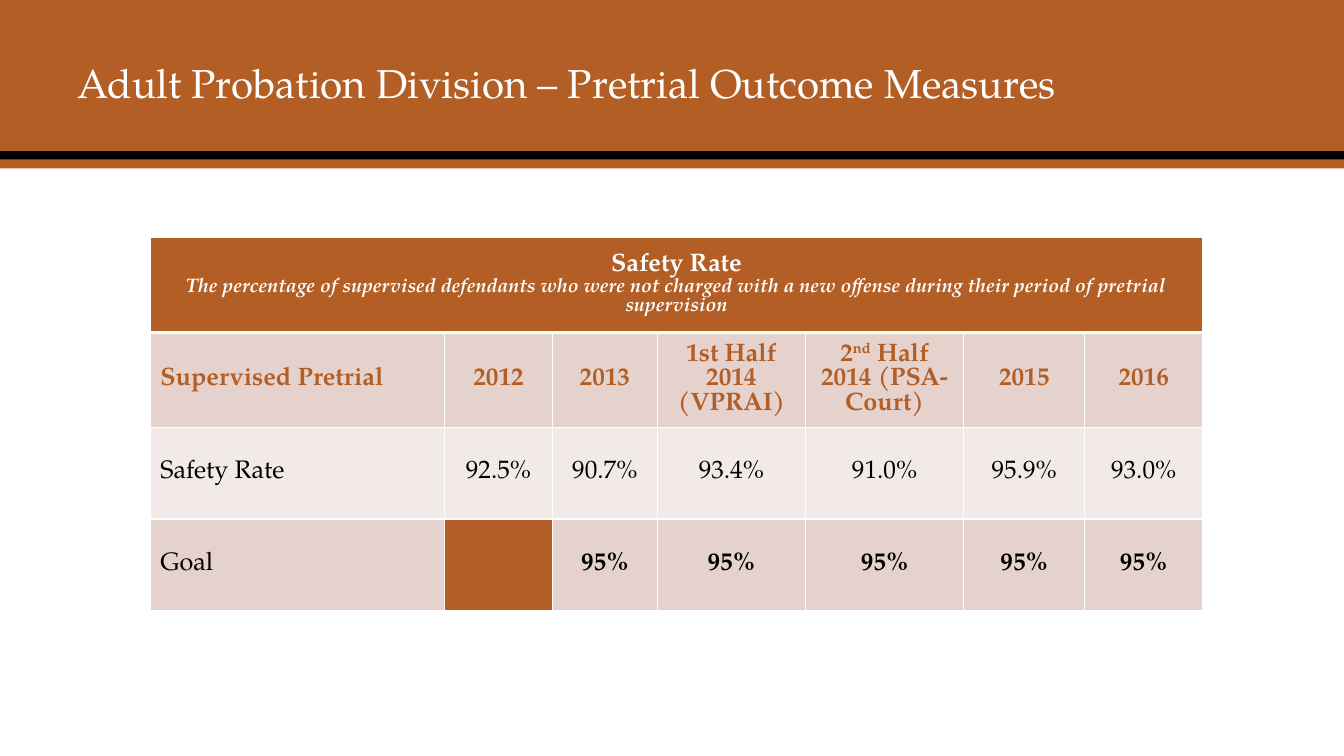
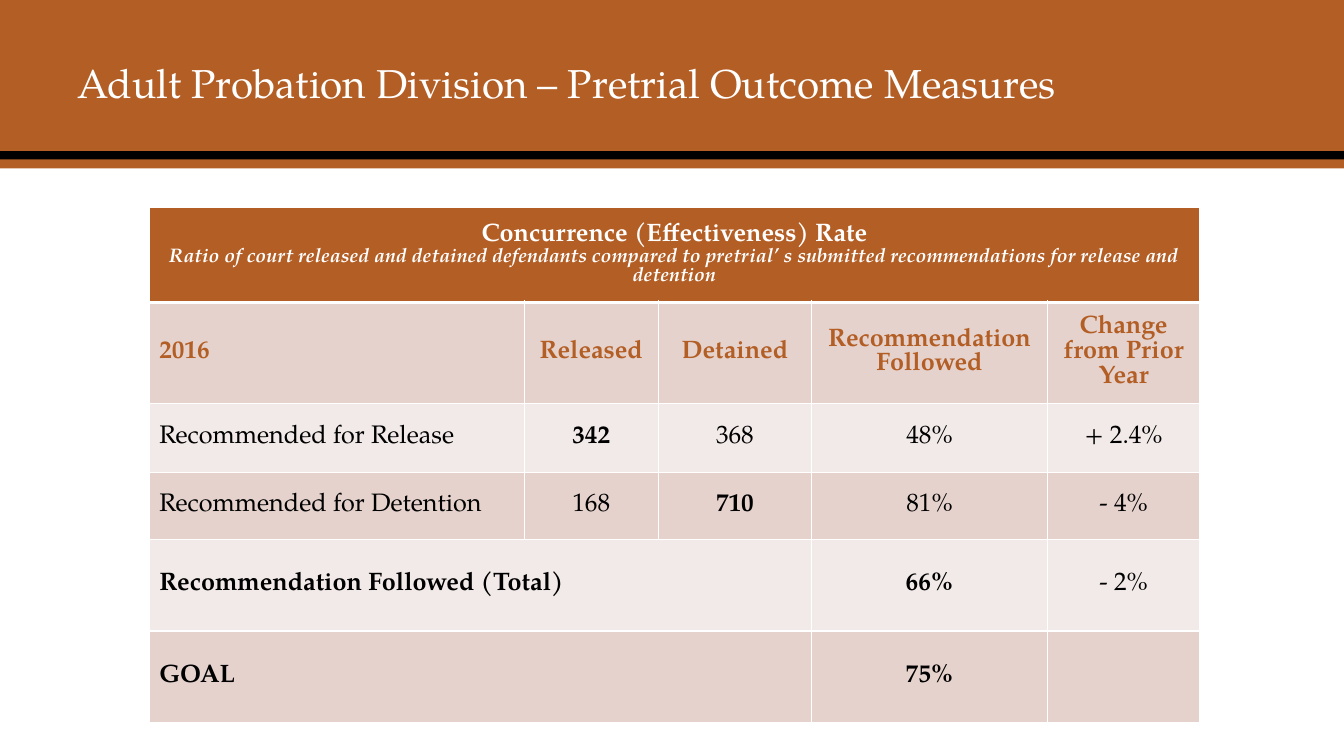
"""Build two slides of pretrial outcome measure tables."""
from pptx import Presentation
from pptx.dml.color import RGBColor
from pptx.enum.shapes import MSO_SHAPE
from pptx.enum.text import MSO_ANCHOR as ANCHOR, PP_ALIGN as ALIGN
from pptx.oxml import parse_xml
from pptx.oxml.ns import nsdecls
from pptx.util import Inches, Pt

COLORS = {
    "rust": "B35E25",
    "black": "000000",
    "white": "FFFFFF",
    "dark_band": "E5D2CD",
    "light_band": "F2EAE8",
}
FONT = "TeX Gyre Pagella"
TITLE = "Adult Probation Division – Pretrial Outcome Measures"
BANDS = [(0, 1.5, "rust"), (1.5, 0.09, "black"), (1.58, 0.09, "rust")]

TABLES = [
    {
        "left": 1.49,
        "top": 2.36,
        "columns": [2.92, 1.07, 1.04, 1.47, 1.57, 1.2, 1.17],
        "heights": [0.94, 0.94, 0.91, 0.91],
        "rows": [
            ["Safety Rate\nThe percentage of supervised defendants who were not charged "
             "with a new offense during their period of pretrial supervision"],
            ["Supervised Pretrial", "2012", "2013", "1st Half 2014\n(VPRAI)",
             "2^nd^ Half 2014 (PSA-Court)", "2015", "2016"],
            ["Safety Rate", "92.5%", "90.7%", "93.4%", "91.0%", "95.9%", "93.0%"],
            ["Goal", "", "95%", "95%", "95%", "95%", "95%"],
        ],
        "spans": {0: 7},
        "bold": {(3, column) for column in range(2, 7)},
        "fills": {(3, 1): "rust"},
    },
    {
        "left": 1.48,
        "top": 2.06,
        "columns": [3.72, 1.33, 1.52, 2.34, 1.51],
        "heights": [0.94, 0.81, 0.69, 0.66, 0.91, 0.91],
        "rows": [
            ["Concurrence (Effectiveness) Rate\nRatio of court released and detained "
             "defendants compared to pretrial’ s submitted recommendations for release "
             "and detention"],
            ["2016", "Released", "Detained", "Recommendation Followed",
             "Change from Prior Year"],
            ["Recommended for Release", "342", "368", "48%", "+ 2.4%"],
            ["Recommended for Detention", "168", "710", "81%", "- 4%"],
            ["Recommendation Followed (Total)", "", "", "66%", "- 2%"],
            ["GOAL", "", "", "75%", ""],
        ],
        "spans": {0: 5, 4: 3, 5: 3},
        "bold": {(2, 1), (3, 2), (4, 0), (4, 3), (5, 0), (5, 3)},
        "fills": {},
    },
]


def add_run(paragraph, text, size, color, bold=False, italic=False):
    run = paragraph.add_run()
    run.text = text
    run.font.name = FONT
    run.font.size = Pt(size)
    run.font.bold = bold
    run.font.italic = italic
    run.font.color.rgb = RGBColor.from_string(COLORS[color])
    return run


def style_cell(cell, fill, top, bottom):
    properties = cell._tc.get_or_add_tcPr()
    for side, width in (("L", 1), ("R", 1), ("T", top), ("B", bottom)):
        properties.append(parse_xml(
            f'<a:ln{side} {nsdecls("a")} w="{Pt(width)}"><a:solidFill>'
            f'<a:srgbClr val="{COLORS["white"]}"/></a:solidFill></a:ln{side}>'))
    cell.fill.solid()
    cell.fill.fore_color.rgb = RGBColor.from_string(COLORS[fill])
    cell.vertical_anchor = ANCHOR.MIDDLE


presentation = Presentation()
presentation.slide_width = Inches(13.33)
presentation.slide_height = Inches(7.5)

for data in TABLES:
    slide = presentation.slides.add_slide(presentation.slide_layouts[6])

    for top, height, color in BANDS:
        band = slide.shapes.add_shape(
            MSO_SHAPE.RECTANGLE, 0, Inches(top), presentation.slide_width, Inches(height))
        band.shadow.inherit = False
        band.fill.solid()
        band.fill.fore_color.rgb = RGBColor.from_string(COLORS[color])
        band.line.fill.background()

    columns, heights = data["columns"], data["heights"]
    table = slide.shapes.add_table(
        len(heights), len(columns), Inches(data["left"]), Inches(data["top"]),
        Inches(sum(columns)), Inches(sum(heights))).table
    for column, width in zip(table.columns, columns):
        column.width = Inches(width)
    for row, height in zip(table.rows, heights):
        row.height = Inches(height)

    for row_index in range(len(heights)):
        band_fill = "rust" if row_index == 0 else ("light_band", "dark_band")[row_index % 2]
        for column_index in range(len(columns)):
            fill = data["fills"].get((row_index, column_index), band_fill)
            style_cell(table.cell(row_index, column_index), fill,
                       3 if row_index == 1 else 1, 3 if row_index == 0 else 1)
    for row_index, span in data["spans"].items():
        table.cell(row_index, 0).merge(table.cell(row_index, span - 1))

    for row_index, texts in enumerate(data["rows"]):
        color = ("white", "rust")[row_index] if row_index < 2 else "black"
        for column_index, text in enumerate(texts):
            if not text:
                continue
            frame = table.cell(row_index, column_index).text_frame
            bold = row_index < 2 or (row_index, column_index) in data["bold"]
            for line_index, line in enumerate(text.split("\n")):
                paragraph = frame.add_paragraph() if line_index else frame.paragraphs[0]
                centered = row_index == 0 or column_index > 0
                paragraph.alignment = ALIGN.CENTER if centered else ALIGN.LEFT
                subtitle = row_index == 0 and line_index == 1
                for part_index, part in enumerate(line.split("^")):
                    run = add_run(paragraph, part, 14 if subtitle else 18, color, bold, subtitle)
                    if part_index % 2:
                        run._r.get_or_add_rPr().set("baseline", "30000")

    title = slide.shapes.add_textbox(Inches(0.67), Inches(0.37), Inches(10.5), Inches(0.74))
    title.text_frame.word_wrap = True
    title.text_frame.vertical_anchor = ANCHOR.BOTTOM
    paragraph = title.text_frame.paragraphs[0]
    paragraph.line_spacing = 0.9
    add_run(paragraph, TITLE, 28.8, "white")

presentation.save("out.pptx")
